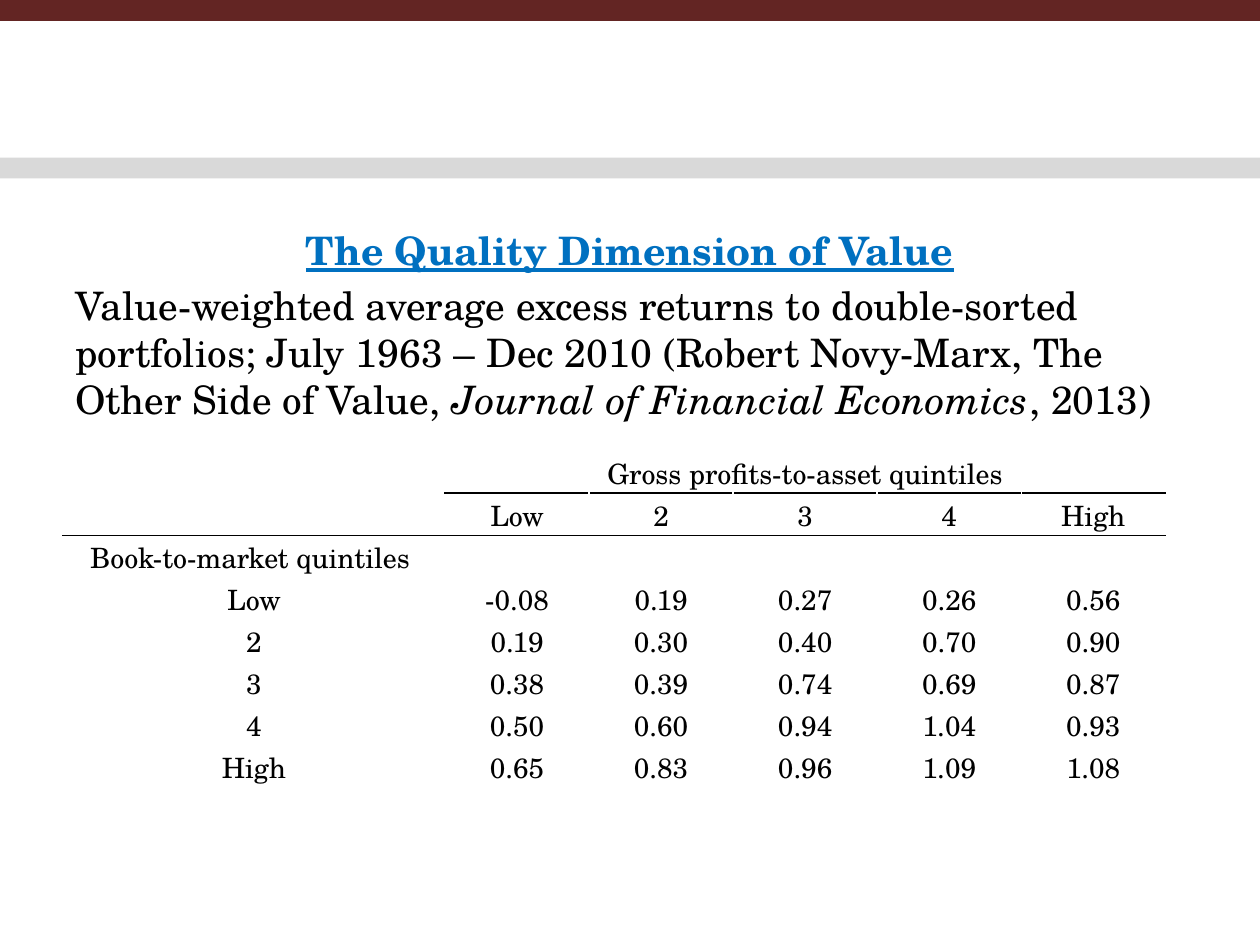
from lxml import etree
from pptx import Presentation
from pptx.dml.color import RGBColor
from pptx.enum.shapes import MSO_SHAPE
from pptx.enum.text import MSO_ANCHOR, PP_ALIGN
from pptx.oxml.ns import qn
from pptx.util import Pt

RECTANGLE = MSO_SHAPE.RECTANGLE
MIDDLE = MSO_ANCHOR.MIDDLE
CENTER = PP_ALIGN.CENTER
LEFT = PP_ALIGN.LEFT
FONT = "TeX Gyre Schola"
BLACK = "000000"
WHITE = "FFFFFF"


def color(value):
    return RGBColor.from_string(value)


def add_run(paragraph, text, size, text_color):
    run = paragraph.add_run()
    run.text = text
    run.font.name = FONT
    run.font.size = Pt(size)
    run.font.color.rgb = color(text_color)
    return run


presentation = Presentation()
presentation.slide_width = Pt(720)
presentation.slide_height = Pt(540)
slide = presentation.slides.add_slide(presentation.slide_layouts[6])

for top, band_color in [(0, "632523"), (90, "D9D9D9")]:
    band = slide.shapes.add_shape(RECTANGLE, Pt(0), Pt(top), Pt(720), Pt(12))
    band.shadow.inherit = False
    band.fill.solid()
    band.fill.fore_color.rgb = color(band_color)
    band.line.fill.background()

body = slide.shapes.add_textbox(Pt(36), Pt(126), Pt(648), Pt(108))
text_frame = body.text_frame
text_frame.word_wrap = True
title = text_frame.paragraphs[0]
title.alignment = CENTER
title_run = add_run(title, "The Quality Dimension of Value", 22.4, "0070C0")
title_run.font.bold = True
title_run.font.underline = True

description = text_frame.add_paragraph()
description.alignment = LEFT
description.space_before = Pt(4.5)
for text, italic in [
    ("Value-weighted average excess returns to double-sorted portfolios; "
     "July 1963 – Dec 2010 (Robert Novy-Marx, The Other Side of Value, ", False),
    ("Journal of Financial Economics", True),
    (", 2013)", False),
]:
    add_run(description, text, 22.4, BLACK).font.italic = italic

rows = [
    ["", "Gross profits-to-asset quintiles", "", "", "", ""],
    ["", "Low", "2", "3", "4", "High"],
    ["Book-to-market quintiles ", "", "", "", "", ""],
    ["Low", "-0.08", "0.19", "0.27", "0.26", "0.56"],
    ["2", "0.19", "0.30", "0.40", "0.70", "0.90"],
    ["3", "0.38", "0.39", "0.74", "0.69", "0.87"],
    ["4", "0.50", "0.60", "0.94", "1.04", "0.93"],
    ["High", "0.65", "0.83", "0.96", "1.09", "1.08"],
]
row_height = 24.05
column_widths = [218.3] + [82.34] * 5
table = slide.shapes.add_table(
    len(rows), len(column_widths), Pt(36), Pt(257.8),
    Pt(sum(column_widths)), Pt(row_height * len(rows)),
).table
table.first_row = False
table.horz_banding = False
for column, width in zip(table.columns, column_widths):
    column.width = Pt(width)
for row in table.rows:
    row.height = Pt(row_height)
table.cell(0, 1).merge(table.cell(0, 5))

for row_index, row_texts in enumerate(rows):
    for column_index, text in enumerate(row_texts):
        cell = table.cell(row_index, column_index)
        cell.vertical_anchor = MIDDLE
        cell.margin_left = cell.margin_right = cell.margin_top = Pt(0.7)
        cell.margin_bottom = Pt(0)
        in_quintiles = column_index > 0
        black_top = row_index == 2 or (row_index == 1 and in_quintiles)
        black_bottom = row_index == 1 or (row_index == 0 and in_quintiles)
        properties = cell._tc.get_or_add_tcPr()
        for side, is_black in [("L", False), ("R", False), ("T", black_top), ("B", black_bottom)]:
            border = etree.SubElement(properties, qn(f"a:ln{side}"), w=str(Pt(1)))
            border_fill = etree.SubElement(border, qn("a:solidFill"))
            etree.SubElement(border_fill, qn("a:srgbClr"), val=BLACK if is_black else WHITE)
        cell.fill.solid()
        cell.fill.fore_color.rgb = color(WHITE)
        if text:
            paragraph = cell.text_frame.paragraphs[0]
            paragraph.alignment = CENTER
            add_run(paragraph, text, 16, BLACK)

presentation.save("out.pptx")
